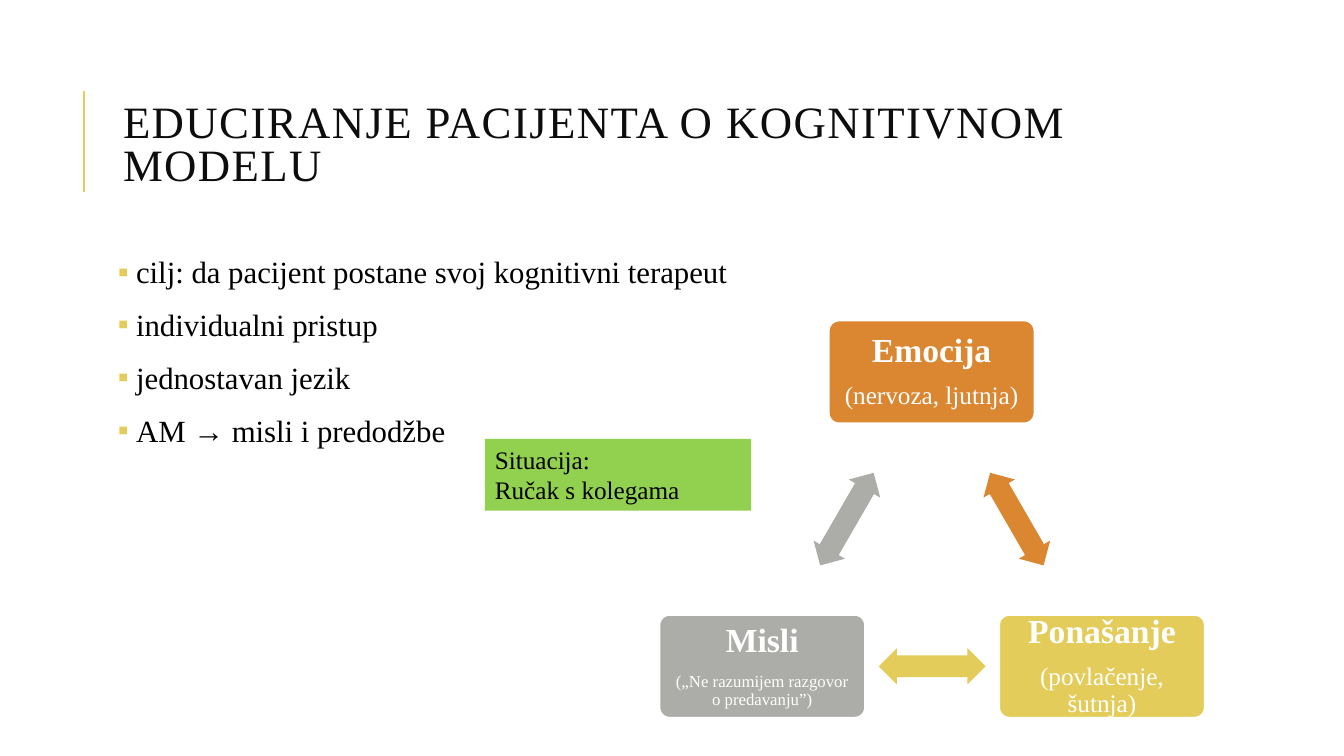
from itertools import combinations

from lxml.etree import SubElement
from pptx import Presentation
from pptx.dml.color import RGBColor
from pptx.enum.shapes import MSO_CONNECTOR, MSO_SHAPE
from pptx.enum.text import MSO_ANCHOR, MSO_AUTO_SIZE, PP_ALIGN
from pptx.oxml.ns import qn
from pptx.util import Inches, Pt

TITLE = "EDUCIRANJE PACIJENTA O KOGNITIVNOM MODELU"
BULLETS = [
    "cilj: da pacijent postane svoj kognitivni terapeut",
    "individualni pristup",
    "jednostavan jezik",
    "AM → misli i predodžbe",
]
SITUATION = ["Situacija:", "Ručak s kolegama"]
ORANGE, YELLOW, GRAY, GREEN = "DB8631", "E3CC5A", "ACADA8", "92D050"
WHITE, BLACK, TITLE_COLOR = "FFFFFF", "000000", "0D0D0D"
# heading, detail, detail size, fill, centre x, centre y
NODES = [
    ("Emocija", "(nervoza, ljutnja)", 18, ORANGE, 9.24, 3.69),
    ("Ponašanje", "(povlačenje, šutnja)", 18, YELLOW, 10.93, 6.61),
    ("Misli", "(„Ne razumijem razgovor o predavanju”)", 12, GRAY, 7.56, 6.61),
]
# colour and rotation of the arrow between each pair of nodes
ARROWS = [(ORANGE, 60), (GRAY, 300), (YELLOW, 180)]
NODE_SIZE = (2.04, 1.02)
ARROW_SIZE = (1.06, 0.36)


def color(value):
    return RGBColor.from_string(value)


def write(frame, index, text, size, ink=BLACK, bold=False, align=PP_ALIGN.LEFT,
          line=1.0, before=0, after=0, bullet=None, indent=0, tracking=0):
    """Fill paragraph number index of the frame, adding it when needed."""
    para = frame.paragraphs[0] if index == 0 else frame.add_paragraph()
    para.alignment = align
    para.line_spacing = line
    para.space_before = Pt(before if index else 0)
    para.space_after = Pt(after)
    if bullet:
        props = para._p.get_or_add_pPr()
        props.set("marL", str(Inches(indent)))
        props.set("indent", str(-Inches(indent)))
        tint = SubElement(props, qn("a:buClr"))
        SubElement(tint, qn("a:srgbClr")).set("val", YELLOW)
        SubElement(props, qn("a:buFont")).set("typeface", "Times New Roman")
        SubElement(props, qn("a:buChar")).set("char", bullet)
    span = para.add_run()
    span.text = text
    span.font.name = "Times New Roman"
    span.font.size = Pt(size)
    span.font.bold = bold
    span.font.color.rgb = color(ink)
    if tracking:
        span.font._element.set("spc", str(tracking * 100))


def set_margins(frame, inset):
    frame.margin_left = frame.margin_right = Inches(inset)
    frame.margin_top = frame.margin_bottom = Inches(inset)


def add_centred(page, kind, center, size, fill, adjustments=()):
    (x, y), (width, height) = center, size
    shape = page.shapes.add_shape(kind, Inches(x - width / 2), Inches(y - height / 2),
                                  Inches(width), Inches(height))
    shape.shadow.inherit = False
    shape.fill.solid()
    shape.fill.fore_color.rgb = color(fill)
    shape.line.fill.background()
    for number, value in enumerate(adjustments):
        shape.adjustments[number] = value
    return shape


def add_title(page):
    rule = page.shapes.add_connector(MSO_CONNECTOR.STRAIGHT, Inches(0.83), Inches(1.9),
                                     Inches(0.83), Inches(0.9))
    rule.line.color.rgb = color(YELLOW)
    rule.line.width = Pt(1.5)
    SubElement(rule._element.spPr, qn("a:effectLst"))
    title = page.shapes.title
    title.left, title.top = Inches(1.12), Inches(0.64)
    title.width, title.height = Inches(10.63), Inches(1.64)
    frame = title.text_frame
    frame.auto_size = MSO_AUTO_SIZE.NONE
    frame.vertical_anchor = MSO_ANCHOR.MIDDLE
    write(frame, 0, TITLE, 32, ink=TITLE_COLOR, line=0.8, tracking=1)


def add_bullets(page):
    box = page.shapes.add_textbox(Inches(1.12), Inches(2.5), Inches(10.63), Inches(4.4))
    frame = box.text_frame
    frame.word_wrap = True
    set_margins(frame, 0.05)
    for index, text in enumerate(BULLETS):
        write(frame, index, text, 22, line=0.9, before=12, after=2,
              bullet="▪", indent=0.18)


def add_cycle(page):
    for heading, detail, size, fill, x, y in NODES:
        node = add_centred(page, MSO_SHAPE.ROUNDED_RECTANGLE, (x, y), NODE_SIZE, fill, [0.1])
        node.line.color.rgb = color(WHITE)
        node.line.width = Pt(1.25)
        frame = node.text_frame
        frame.word_wrap = True
        frame.vertical_anchor = MSO_ANCHOR.MIDDLE
        set_margins(frame, 0.1)
        look = dict(ink=WHITE, align=PP_ALIGN.CENTER, line=0.9)
        write(frame, 0, heading, 24, bold=True, after=9.5, **look)
        write(frame, 1, detail, size, **look)
    for (first, second), (fill, angle) in zip(combinations(NODES, 2), ARROWS):
        middle = ((first[4] + second[4]) / 2, (first[5] + second[5]) / 2)
        arrow = add_centred(page, MSO_SHAPE.LEFT_RIGHT_ARROW, middle, ARROW_SIZE, fill,
                            [0.6, 0.5])
        arrow.rotation = angle


def add_situation(page):
    box = add_centred(page, MSO_SHAPE.RECTANGLE, (6.13, 4.71), (2.64, 0.71), GREEN)
    frame = box.text_frame
    frame.word_wrap = True
    frame.vertical_anchor = MSO_ANCHOR.TOP
    for index, text in enumerate(SITUATION):
        write(frame, index, text, 18)


def main():
    deck = Presentation()
    deck.slide_width, deck.slide_height = Inches(13.33), Inches(7.5)
    page = deck.slides.add_slide(deck.slide_layouts[5])
    add_title(page)
    add_bullets(page)
    add_cycle(page)
    add_situation(page)
    deck.save("out.pptx")


if __name__ == "__main__":
    main()
